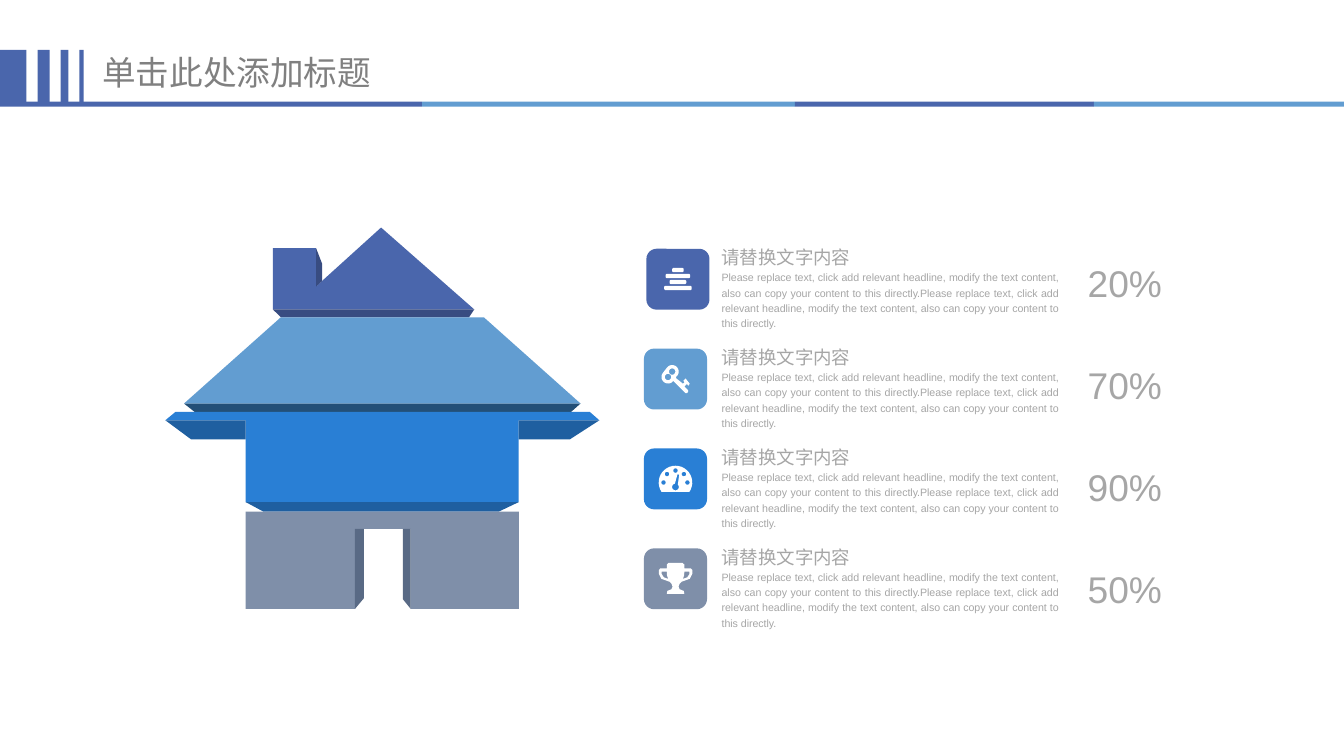
from math import cos, radians, sin

from lxml.etree import SubElement
from pptx import Presentation
from pptx.dml.color import RGBColor
from pptx.enum.shapes import MSO_SHAPE as Shape
from pptx.enum.text import PP_ALIGN as Align
from pptx.oxml.ns import qn
from pptx.util import Pt

COLORS = {
    "indigo": "4A66AC", "indigo_dark": "384C81",
    "sky": "629DD1", "sky_dark": "234F77",
    "blue": "297FD5", "blue_dark": "1F5FA0",
    "slate": "7F8FA9", "slate_dark": "596A85",
    "title": "808080", "text": "A6A6A6", "white": "FFFFFF",
}
CJK_FONT = "Noto Sans CJK SC"
HEADING = "请替换文字内容"
SENTENCE = ("Please replace text, click add relevant headline, modify the text "
            "content, also can copy your content to this directly.")

# House faces from the roof down: color and corner points
HOUSE = [
    ("indigo", [(254.1, 165.8), (146.2, 165.8), (146.2, 132.9), (169.3, 132.9),
                (169.3, 153.5), (172.5, 150.6), (204.2, 121.9)]),
    ("indigo_dark", [(172.5, 150.6), (169.3, 153.5), (169.3, 132.9), (172.5, 141.2)]),
    ("indigo_dark", [(251.3, 170), (150.5, 170), (146.2, 165.8), (254.1, 165.8)]),
    ("sky", [(311, 216.2), (98.6, 216.2), (150.5, 170), (259.2, 170)]),
    ("sky_dark", [(305.9, 220.7), (104.3, 220.7), (98.6, 216.2), (311, 216.2)]),
    ("blue", [(94, 220.7), (316, 220.7), (321.1, 225.2), (277.9, 225.2),
              (277.9, 269), (131.6, 269), (131.6, 225.2), (88.6, 225.2)]),
    ("blue_dark", [(131.6, 235.4), (102.4, 235.4), (88.6, 225.2), (131.6, 225.2)]),
    ("blue_dark", [(277.9, 235.4), (277.9, 225.2), (321.1, 225.2), (305.3, 235.4)]),
    ("blue_dark", [(267.2, 274.1), (141.1, 274.1), (131.6, 269), (277.9, 269)]),
    ("slate", [(190.2, 326.2), (131.6, 326.2), (131.6, 274.1), (277.9, 274.1),
               (277.9, 326.2), (220, 326.2), (220, 283.4), (190.2, 283.4)]),
    ("slate_dark", [(220, 326.2), (215.9, 321.1), (215.9, 283.4), (220, 283.4)]),
    ("slate_dark", [(190.2, 326.2), (190.2, 283.4), (194.9, 283.4), (194.9, 320.6)]),
]


def paint(sp, color):
    sp.shadow.inherit = False
    sp.fill.solid()
    sp.fill.fore_color.rgb = RGBColor.from_string(COLORS[color])
    sp.line.fill.background()


def add_block(s, kind, x, y, w, h, color):
    paint(s.shapes.add_shape(kind, Pt(x), Pt(y), Pt(w), Pt(h)), color)


def add_outline(s, contours, color, x=0, y=0):
    """One freeform of closed contours, moved by x and y."""
    placed = [[(Pt(x + px), Pt(y + py)) for px, py in c] for c in contours]
    builder = s.shapes.build_freeform(*placed[0][0])
    builder.add_line_segments(placed[0][1:])
    for contour in placed[1:]:
        builder.move_to(*contour[0])
        builder.add_line_segments(contour[1:])
    paint(builder.convert_to_shape(), color)


def add_text(s, x, y, w, h, lines, color, align, font="Arial",
             spacing=None, wrap=True, insets=(0, 0)):
    """Each line is a (text, size) pair and makes one paragraph."""
    tf = s.shapes.add_textbox(Pt(x), Pt(y), Pt(w), Pt(h)).text_frame
    tf.word_wrap = wrap
    tf.margin_left = tf.margin_right = Pt(insets[0])
    tf.margin_top = tf.margin_bottom = Pt(insets[1])
    for i, (text, size) in enumerate(lines):
        p = tf.add_paragraph() if i else tf.paragraphs[0]
        p.alignment = align
        p.line_spacing = spacing
        r = p.add_run()
        r.text = text
        r.font.size = Pt(size)
        r.font.color.rgb = RGBColor.from_string(COLORS[color])
        r.font.name = font
        SubElement(r.font._element, qn("a:ea"), typeface=CJK_FONT)


def arc(cx, cy, radius, start=0, end=360, steps=24):
    angles = [radians(start + (end - start) * i / steps) for i in range(steps + 1)]
    return [(cx + radius * cos(a), cy + radius * sin(a)) for a in angles]


# Icons: contours around the middle of their tile
def stack_icon():
    bars = [(3.1, -4.9), (6.6, -1.7), (4.5, 1.5), (7.4, 4.7)]
    return [[(-w, y - 0.6), (0.5 - w, y - 1.1), (w - 0.5, y - 1.1), (w, y - 0.6),
             (w, y + 0.6), (w - 0.5, y + 1.1), (0.5 - w, y + 1.1), (-w, y + 0.6)]
            for w, y in bars]


def key_icon():
    shaft = [(-1.1, 1.1), (5.4, 7.6), (6.1, 7.6), (6.8, 6.8), (6.8, 6.1),
             (4.7, 4), (6.1, 2.6), (6.8, 3.6), (7.6, 2.5), (5.4, -0.3),
             (4.2, 0.9), (4.8, 1.8), (4, 2.5), (0.4, -0.4)]
    bow = arc(-1.8, -4, 3.5, 55, -143) + arc(-4, -1.1, 3.5, 217, 37)
    return [shaft + bow, arc(-1.8, -4, 1.7), arc(-4, -1.1, 1.7)]


def gauge_icon():
    dots = [arc(x, y, 1.2) for x, y in arc(0, 1.9, 6.4, 180, 360, 4)]
    needle = arc(0, 4.3, 1.8, -45, 260) + [(1.1, -2.5), (2, -2.3)]
    return [arc(0, 1.9, 9, 146, 394), needle] + dots


def trophy_icon():
    half = [(3.8, -8.5), (4.7, -7.6), (4.7, -5.6), (8.1, -5.6), (9, -4.7),
            (9, -2.8), (7.6, 0), (3.2, 1.6), (2.2, 2.6), (1.6, 4.2),
            (2.2, 5.6), (4.4, 6.5), (4.7, 8.1)]
    handle = [(4.7, -3.8), (7.4, -3.8), (7.4, -2.5), (6.3, -0.8),
              (3.9, 0.1), (4.6, -1.8)]

    def mirror(points):
        return [(-x, y) for x, y in points]

    return [half + mirror(half)[::-1], handle, mirror(handle)]


def add_header(s):
    add_text(s, 49, 25.2, 192.2, 27.4, [("单击此处添加标题", 18)], "title",
             Align.LEFT, font=CJK_FONT, insets=(5.8, 2.9))
    for x, w in [(0, 14.2), (20.2, 6.4), (32.5, 4.1), (42.6, 2.2)]:
        add_block(s, Shape.RECTANGLE, x, 26.8, w, 28, "indigo")
    edges = [0, 226.1, 425.9, 586, 720]
    for i, (left, right) in enumerate(zip(edges, edges[1:])):
        add_block(s, Shape.RECTANGLE, left, 54.5, right - left, 2.7,
                  ("indigo", "sky")[i % 2])


def add_item(s, row, color, icon, percent):
    tile_w, tile_h, pitch = 33.8, 32.6, 53.5
    x = 345 if row else 346.3
    y = 133.3 + pitch * row
    add_block(s, Shape.ROUNDED_RECTANGLE, x, y, tile_w, tile_h, color)
    add_outline(s, icon, "white", x + tile_w / 2, y + tile_h / 2)
    add_text(s, 386.6, y - 3.6, 180.7, 47.5, [(HEADING, 9.9), (SENTENCE * 2, 5.7)],
             "text", Align.JUSTIFY, spacing=1.2)
    add_text(s, 582.5, 134.9 + 54.6 * row, 40.3, 28.8, [(percent, 19.9)],
             "text", Align.CENTER, spacing=1.2, wrap=False)


def main():
    prs = Presentation()
    prs.slide_width, prs.slide_height = Pt(720), Pt(405)
    s = prs.slides.add_slide(prs.slide_layouts[6])

    # Title and colored rule
    add_header(s)

    # House
    for color, corners in HOUSE:
        add_outline(s, [corners], color)

    # Items beside the house
    items = [("indigo", stack_icon(), "20%"), ("sky", key_icon(), "70%"),
             ("blue", gauge_icon(), "90%"), ("slate", trophy_icon(), "50%")]
    for row, item in enumerate(items):
        add_item(s, row, *item)

    prs.save("out.pptx")


if __name__ == "__main__":
    main()
